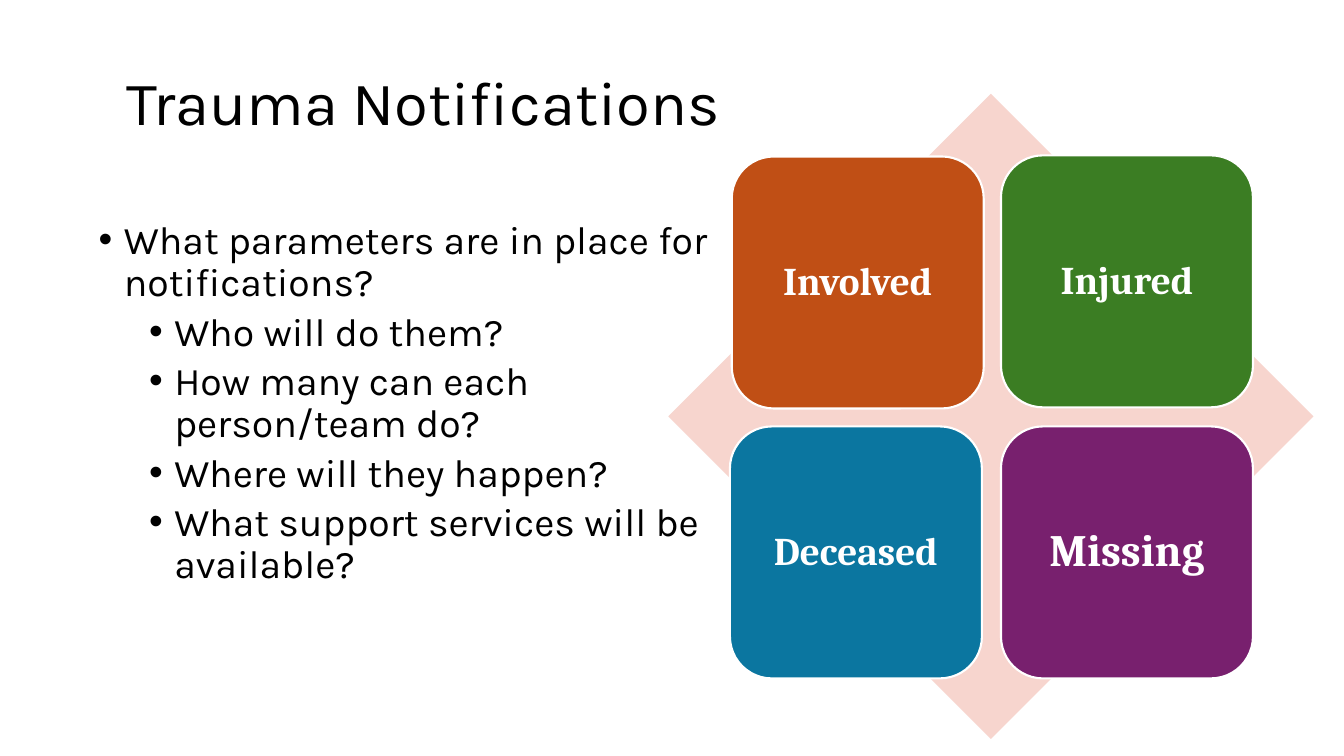
"""Build the Trauma Notifications slide: questions beside a four-part matrix."""
from lxml import etree
from pptx import Presentation
from pptx.dml.color import RGBColor
from pptx.enum import shapes, text
from pptx.oxml import ns
from pptx.util import Pt

TITLE = "Trauma Notifications"
QUESTIONS = [
    (0, "What parameters are in place for notifications?"),
    (1, "Who will do them?"),
    (1, "How many can each person/team do?"),
    (1, "Where will they happen?"),
    (1, "What support services will be available?"),
]
GROUPS = [
    {"name": "Involved", "fill": "C04F15", "size": "body", "nudge": (1.3, 0.8)},
    {"name": "Injured", "fill": "3B7D23", "size": "body", "nudge": (0, 0)},
    {"name": "Deceased", "fill": "0B76A0", "size": "body", "nudge": (0, 0)},
    {"name": "Missing", "fill": "78206E", "size": "large", "nudge": (0, 0)},
]
THEME = {
    "ink": "000000", "light": "FFFFFF", "diamond": "F7D5CE",
    "font": "Karla", "label_font": "Cambria",
    "title": 44, "body": 28, "large": 32,
}

TITLE_BOX = (83.5, 41.8, 603.4, 67)
QUESTION_BOX = (63.4, 154.1, 449.3, 269.3)
DIAMOND_BOX = (477.4, 67, 460.8, 460.8)
MATRIX_LEFT, MATRIX_TOP = 521.4, 111
TILE, PITCH = 180, 193.6
HANGING, LEVEL_STEP = 18, 36


def add_text(frame, content, size, color=THEME["ink"], font=THEME["font"],
             bold=False, align=text.PP_ALIGN.LEFT, level=None, before=0):
    """Write one paragraph, bulleted when a level is given."""
    paragraph = frame.paragraphs[0]
    if paragraph.runs:
        paragraph = frame.add_paragraph()
    if level is not None:
        properties = paragraph._p.get_or_add_pPr()
        properties.set("marL", str(Pt(HANGING + level * LEVEL_STEP)))
        properties.set("indent", str(Pt(-HANGING)))
        bullet_font = etree.SubElement(properties, ns.qn("a:buFont"))
        bullet_font.set("typeface", "Arial")
        etree.SubElement(properties, ns.qn("a:buChar")).set("char", "•")
        paragraph.level = level
    paragraph.alignment = align
    paragraph.line_spacing = 0.9
    paragraph.space_before = Pt(before)
    run = paragraph.add_run()
    run.text = content
    run.font.name, run.font.size, run.font.bold = font, Pt(size), bold
    run.font.color.rgb = RGBColor.from_string(color)


def add_frame(slide, box, anchor):
    """Add a wrapping text box and return its frame."""
    frame = slide.shapes.add_textbox(*map(Pt, box)).text_frame
    frame.word_wrap = True
    frame.vertical_anchor = anchor
    return frame


def add_block(slide, kind, box, fill, outline=None):
    """Add a flat preset shape with an optional outline."""
    block = slide.shapes.add_shape(kind, *map(Pt, box))
    block.shadow.inherit = False
    block.fill.solid()
    block.fill.fore_color.rgb = RGBColor.from_string(fill)
    if outline:
        block.line.color.rgb = RGBColor.from_string(outline)
        block.line.width = Pt(1.5)
    else:
        block.line.fill.background()
    return block


def add_matrix(slide):
    """Lay the four groups in a two-by-two grid over the diamond."""
    add_block(slide, shapes.MSO_SHAPE.DIAMOND, DIAMOND_BOX, THEME["diamond"])
    for index, group in enumerate(GROUPS):
        row, column = divmod(index, 2)
        right, down = group["nudge"]
        box = (MATRIX_LEFT + column * PITCH + right,
               MATRIX_TOP + row * PITCH + down, TILE, TILE)
        tile = add_block(slide, shapes.MSO_SHAPE.ROUNDED_RECTANGLE, box,
                         group["fill"], THEME["light"])
        tile.text_frame.word_wrap = True
        tile.text_frame.vertical_anchor = text.MSO_ANCHOR.MIDDLE
        add_text(tile.text_frame, group["name"], THEME[group["size"]],
                 color=THEME["light"], font=THEME["label_font"], bold=True,
                 align=text.PP_ALIGN.CENTER)


def main():
    """Assemble and save the slide."""
    deck = Presentation()
    deck.slide_width, deck.slide_height = Pt(960), Pt(540)
    slide = deck.slides.add_slide(deck.slide_layouts[6])
    questions = add_frame(slide, QUESTION_BOX, text.MSO_ANCHOR.TOP)
    for index, (level, question) in enumerate(QUESTIONS):
        add_text(questions, question, THEME["body"], level=level,
                 before=5 if index else 0)
    title = add_frame(slide, TITLE_BOX, text.MSO_ANCHOR.MIDDLE)
    add_text(title, TITLE, THEME["title"])
    add_matrix(slide)
    deck.save("out.pptx")


if __name__ == "__main__":
    main()
